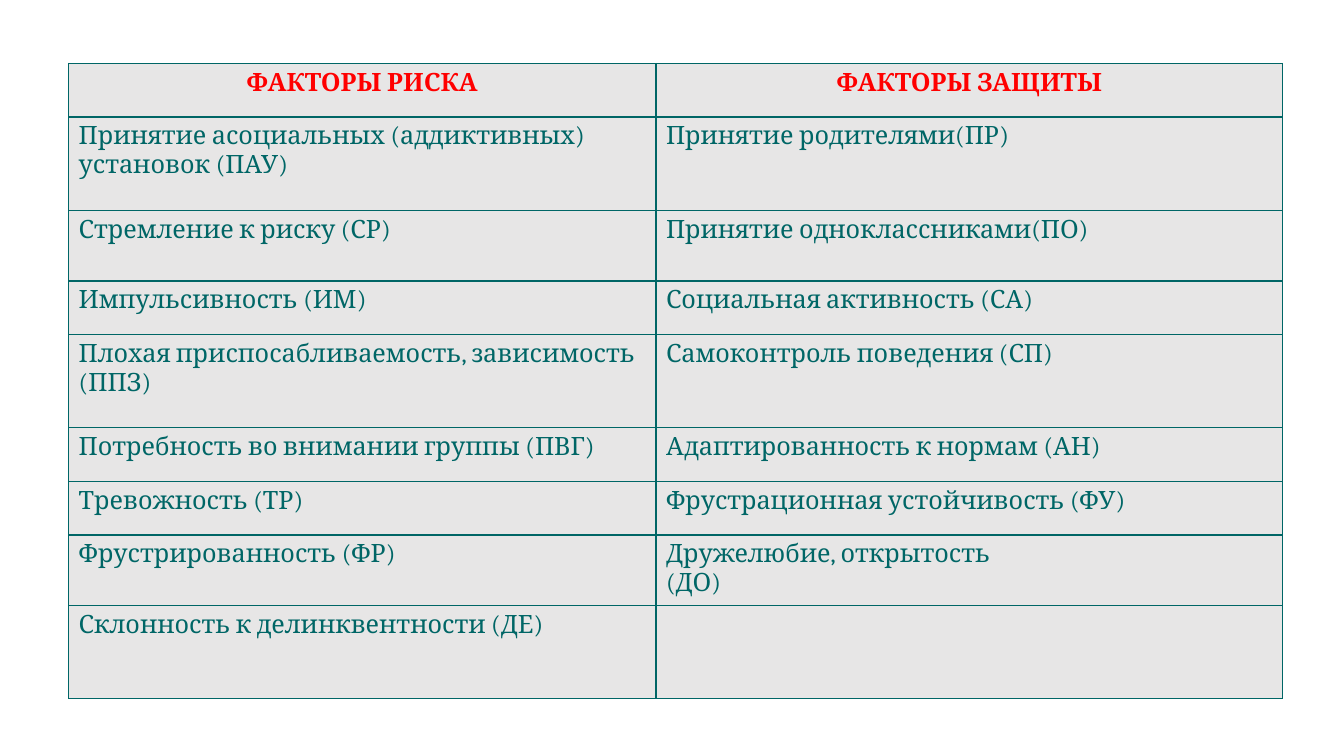
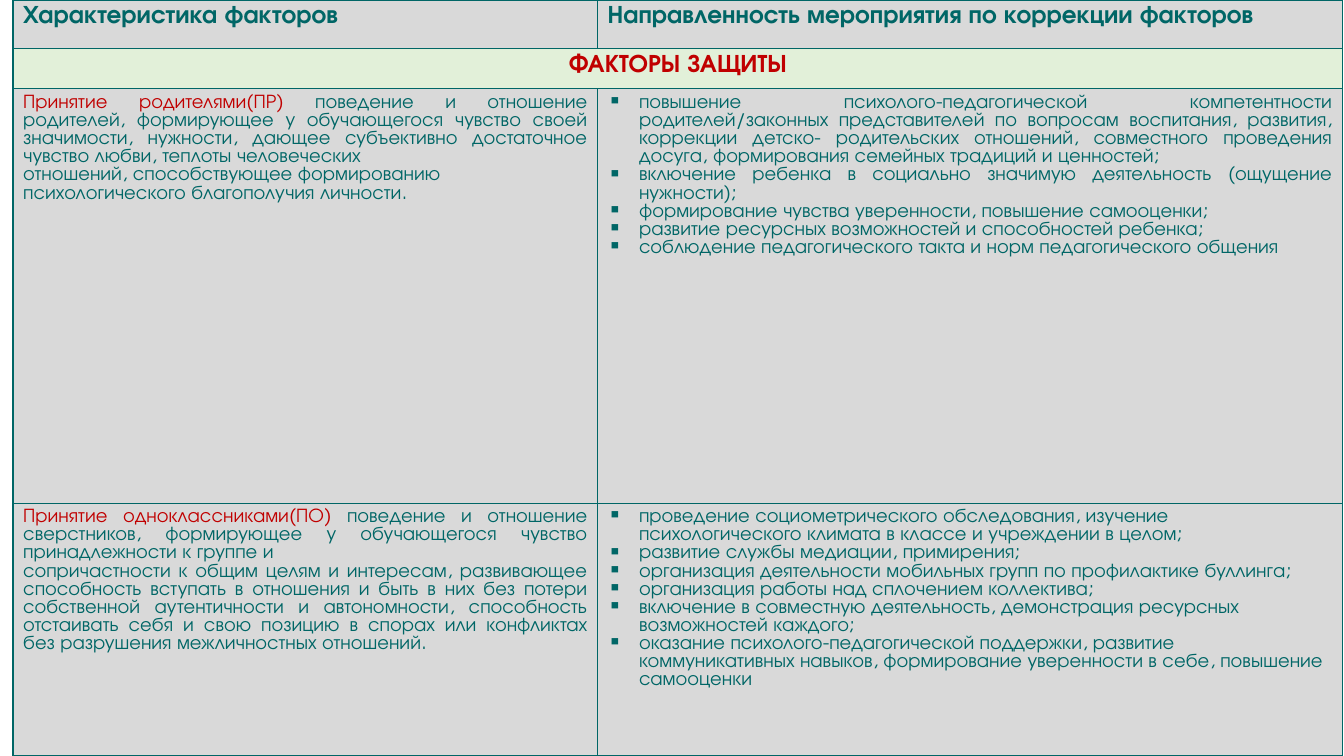
from dataclasses import dataclass

from lxml import etree
from pptx import Presentation
from pptx.dml.color import RGBColor
from pptx.enum.text import PP_ALIGN
from pptx.oxml.ns import qn
from pptx.util import Cm, Pt

LEFT, CENTER, JUSTIFY = PP_ALIGN.LEFT, PP_ALIGN.CENTER, PP_ALIGN.JUSTIFY
BLANK_LAYOUT = 6


@dataclass(frozen=True)
class Theme:
    teal: str = "006666"
    red: str = "FF0000"
    dark_red: str = "C00000"
    pale_gray: str = "E7E6E6"
    gray: str = "D9D9D9"
    pale_green: str = "E2F0D9"
    serif: str = "Cambria"
    sans: str = "TeX Gyre Adventor"
    large: int = 18
    small: int = 14
    border: float = 1
    indent: float = 0.79


THEME = Theme()


class FactorDeck:
    def __init__(self, theme):
        self.theme = theme
        self.deck = Presentation()
        self.deck.slide_width, self.deck.slide_height = Cm(33.87), Cm(19.05)
        self.page = None

    def add_page(self):
        self.page = self.deck.slides.add_slide(self.deck.slide_layouts[BLANK_LAYOUT])

    def add_table(self, left, top, widths, heights, fill):
        frame = self.page.shapes.add_table(
            len(heights), len(widths), Cm(left), Cm(top), Cm(sum(widths)), Cm(sum(heights)))
        table = frame.table
        table.first_row = table.horz_banding = False
        for column, width in zip(table.columns, widths):
            column.width = Cm(width)
        for row, height in zip(table.rows, heights):
            row.height = Cm(height)
        for cell in table.iter_cells():
            self.add_borders(cell)
            self.fill_cell(cell, fill)
        return table

    def add_borders(self, cell):
        properties = cell._tc.get_or_add_tcPr()
        for side in ("a:lnL", "a:lnR", "a:lnT", "a:lnB"):
            line = etree.SubElement(properties, qn(side), w=str(Pt(self.theme.border)))
            fill = etree.SubElement(line, qn("a:solidFill"))
            etree.SubElement(fill, qn("a:srgbClr"), val=self.theme.teal)

    def fill_cell(self, cell, color):
        cell.fill.solid()
        cell.fill.fore_color.rgb = RGBColor.from_string(color)

    def set_text(self, cell, lines, font, size, color=None, bold=False,
                 align=LEFT, bullets=False, lead=""):
        """Set one paragraph per line; a lead opens the first one in dark red."""
        frame = cell.text_frame
        frame.text = "\n".join(lines)
        if lead:
            first = frame.paragraphs[0]
            first.text = lead
            first.add_run().text = lines[0]
        for paragraph in frame.paragraphs:
            paragraph.alignment = align
            if bullets:
                self.add_bullet(paragraph)
            for span in paragraph.runs:
                span.font.name, span.font.size, span.font.bold = font, Pt(size), bold
                span.font.color.rgb = RGBColor.from_string(color or self.theme.teal)
        if lead:
            first.runs[0].font.color.rgb = RGBColor.from_string(self.theme.dark_red)

    def add_bullet(self, paragraph):
        properties = paragraph._p.get_or_add_pPr()
        indent = Cm(self.theme.indent)
        properties.set("marL", str(indent))
        properties.set("indent", str(-indent))
        etree.SubElement(properties, qn("a:buChar"), char="▪")


FACTOR_PAIRS = [
    (["Принятие асоциальных (аддиктивных)", "установок (ПАУ)"],
     ["Принятие родителями(ПР)"]),
    (["Стремление к риску (СР)"], ["Принятие одноклассниками(ПО)"]),
    (["Импульсивность (ИМ)"], ["Социальная активность (СА)"]),
    (["Плохая приспосабливаемость, зависимость (ППЗ)"], ["Самоконтроль поведения (СП)"]),
    (["Потребность во внимании группы (ПВГ)"], ["Адаптированность к нормам (АН)"]),
    (["Тревожность (ТР)"], ["Фрустрационная устойчивость (ФУ)"]),
    (["Фрустрированность (ФР)"], ["Дружелюбие, открытость", "(ДО)"]),
    (["Склонность к делинквентности (ДЕ)"], []),
]

# Lead, description, measures, alignment of the measures
CORRECTIONS = [
    ("Принятие родителями(ПР) ",
     ["поведение и отношение родителей, формирующее у обучающегося чувство своей "
      "значимости, нужности, дающее субъективно достаточное чувство любви, "
      "теплоты человеческих",
      "отношений, способствующее формированию",
      "психологического благополучия личности."],
     ["повышение психолого-педагогической компетентности родителей/законных "
      "представителей по вопросам воспитания, развития, коррекции детско- "
      "родительских отношений, совместного проведения досуга, формирования "
      "семейных традиций и ценностей;",
      "включение ребенка в социально значимую деятельность (ощущение нужности);",
      "формирование чувства уверенности, повышение самооценки;",
      "развитие ресурсных возможностей и способностей ребенка;",
      "соблюдение педагогического такта и норм педагогического общения"],
     JUSTIFY),
    ("Принятие одноклассниками(ПО) ",
     ["поведение и отношение сверстников, формирующее у обучающегося чувство "
      "принадлежности к группе и",
      "сопричастности к общим целям и интересам, развивающее способность вступать "
      "в отношения и быть в них без потери собственной аутентичности и автономности, "
      "способность отстаивать себя и свою позицию в спорах или конфликтах без "
      "разрушения межличностных отношений."],
     ["проведение социометрического обследования, изучение психологического климата "
      "в классе и учреждении в целом;",
      "развитие службы медиации, примирения;",
      "организация деятельности мобильных групп по профилактике буллинга;",
      "организация работы над сплочением коллектива;",
      "включение в совместную деятельность, демонстрация ресурсных возможностей каждого;",
      "оказание психолого-педагогической поддержки, развитие коммуникативных навыков, "
      "формирование уверенности в себе, повышение самооценки"],
     LEFT),
]


def add_factor_page(deck):
    theme = deck.theme
    deck.add_page()
    low, middle, high = 1.35, 1.78, 2.35
    heights = [low, high, middle, low, high, low, low, middle, high]
    table = deck.add_table(1.73, 1.6, [14.8, 15.8], heights, theme.pale_gray)
    for column, heading in enumerate(["ФАКТОРЫ РИСКА", "ФАКТОРЫ ЗАЩИТЫ"]):
        deck.set_text(table.cell(0, column), [heading], theme.serif, theme.large,
                      theme.red, bold=True, align=CENTER)
    for row, pair in enumerate(FACTOR_PAIRS, 1):
        for column, lines in enumerate(pair):
            deck.set_text(table.cell(row, column), lines, theme.serif, theme.large)


def add_correction_page(deck):
    theme = deck.theme
    deck.add_page()
    table = deck.add_table(0.33, 0, [14.73, 18.77], [1.22, 1.02, 10.44, 6.37], theme.gray)
    headings = ["Характеристика факторов", "Направленность мероприятия по коррекции факторов"]
    for column, heading in enumerate(headings):
        deck.set_text(table.cell(0, column), [heading], theme.sans, theme.large, bold=True)
    band = table.cell(1, 0)
    band.merge(table.cell(1, 1))
    deck.fill_cell(band, theme.pale_green)
    deck.set_text(band, ["ФАКТОРЫ ЗАЩИТЫ"], theme.sans, theme.large,
                  theme.dark_red, bold=True, align=CENTER)
    for row, (lead, description, measures, align) in enumerate(CORRECTIONS, 2):
        deck.set_text(table.cell(row, 0), description, theme.sans, theme.small,
                      align=JUSTIFY, lead=lead)
        deck.set_text(table.cell(row, 1), measures, theme.sans, theme.small,
                      align=align, bullets=True)


def main():
    deck = FactorDeck(THEME)
    add_factor_page(deck)
    add_correction_page(deck)
    deck.deck.save("out.pptx")


if __name__ == "__main__":
    main()
